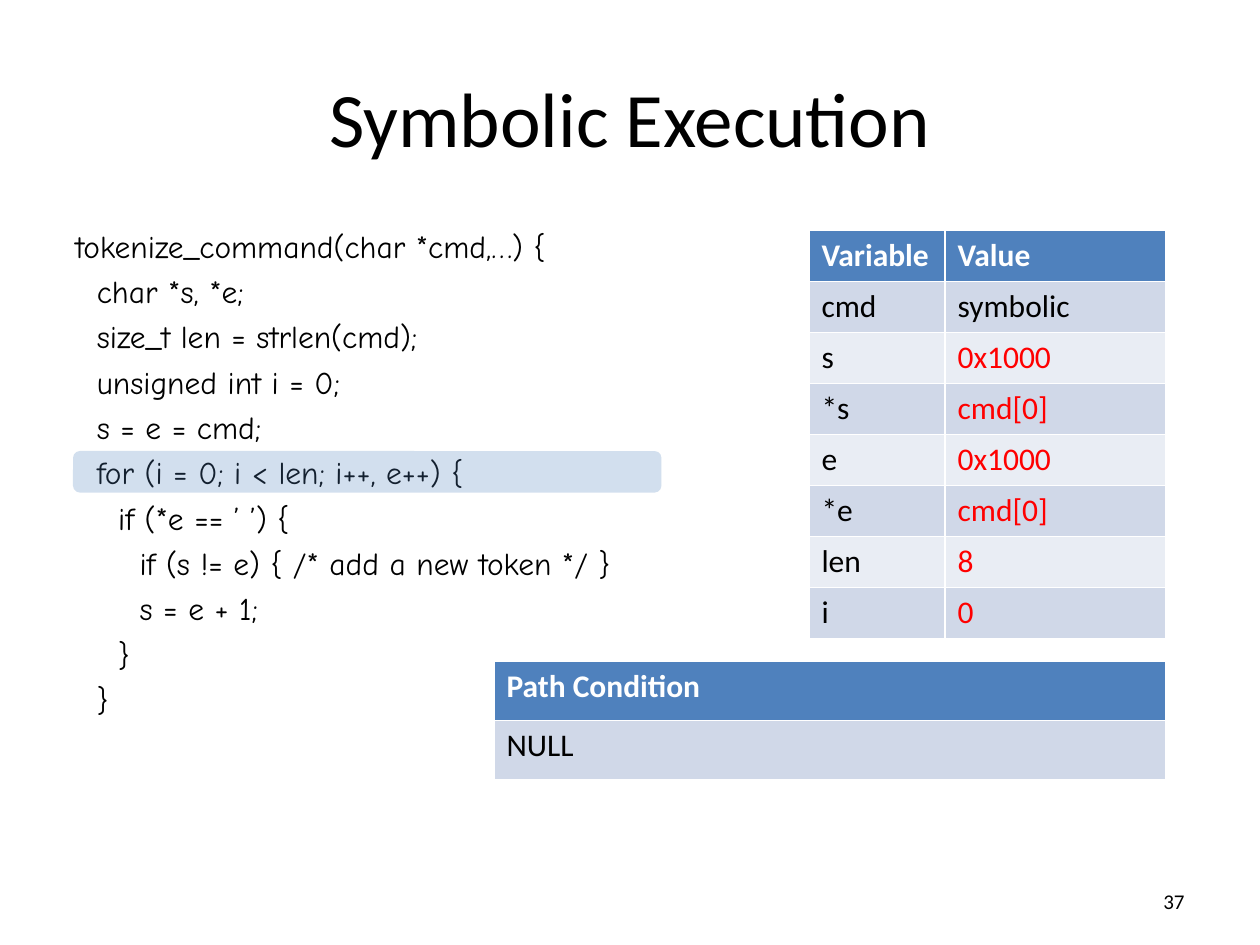
"""Build the symbolic execution slide."""
from lxml import etree
from pptx import Presentation
from pptx.dml.color import RGBColor
from pptx.enum import shapes, text
from pptx.oxml import ns
from pptx.util import Inches, Pt

BLACK, WHITE, RED, BLUE = "000000", "FFFFFF", "FF0000", "4F81BD"
BANDS = ["E9EDF4", "D0D8E8"]
CODE = [
    (0, "tokenize_command(char *cmd,…) {"),
    (1, "char *s, *e;"),
    (1, "size_t len = strlen(cmd);"),
    (1, "unsigned int i = 0;"),
    (1, "s = e = cmd;"),
    (1, "for (i = 0; i < len; i++, e++) {"),
    (2, "if (*e == ’ ’) {"),
    (3, "if (s != e) { /* add a new token */ }"),
    (3, "s = e + 1;"),
    (2, "}"),
    (1, "}"),
]
STATE = [
    ("Variable", "Value"),
    ("cmd", "symbolic"),
    ("s", "0x1000"),
    ("*s", "cmd[0]"),
    ("e", "0x1000"),
    ("*e", "cmd[0]"),
    ("len", "8"),
    ("i", "0"),
]
PATH = [("Path Condition",), ("NULL",)]


def box(*sides):
    """Convert inches to lengths."""
    return [Inches(side) for side in sides]


def paint(color, code):
    """Set a colour from a hex string."""
    color.rgb = RGBColor.from_string(code)


def style(para, size, code=BLACK, name="Calibri", bold=False):
    """Set the font of a paragraph."""
    font = para.font
    font.size, font.name, font.bold = Pt(size), name, bold
    paint(font.color, code)


def add_title(slide, words):
    """Fill and place the title."""
    title = slide.shapes.title
    title.left, title.top, title.width, title.height = box(0.5, 0.3, 9, 1.25)
    frame = title.text_frame
    frame.text = words
    frame.vertical_anchor = text.MSO_ANCHOR.MIDDLE
    para = frame.paragraphs[0]
    para.alignment = text.PP_ALIGN.CENTER
    style(para, 44)


def add_code(slide, lines):
    """Add the code with one indent step per level."""
    frame = slide.shapes.add_textbox(*box(0.5, 1.75, 4.83, 4)).text_frame
    frame.word_wrap = True
    for i, (level, words) in enumerate(lines):
        para = frame.add_paragraph() if i else frame.paragraphs[0]
        para.text = words
        para.space_before = Pt(4.3)
        para._p.get_or_add_pPr().set("marL", str(Inches(0.17 * level)))
        style(para, 18, name="Comic Neue")


def add_grid(slide, place, widths, rows, reds=()):
    """Add a banded table with a header row."""
    grid = slide.shapes.add_table(len(rows), len(widths), *box(*place)).table
    for col, width in zip(grid.columns, widths):
        col.width = Inches(width)
    for r, row in enumerate(rows):
        for c, words in enumerate(row):
            cell = grid.cell(r, c)
            cell.text = words
            cell.fill.solid()
            paint(cell.fill.fore_color, BANDS[r % 2] if r else BLUE)
            code = RED if (r, c) in reds else BLACK if r else WHITE
            style(cell.text_frame.paragraphs[0], 18, code, bold=r == 0)


def add_mark(slide, place):
    """Add a clear rounded bar over the current line."""
    bar = slide.shapes.add_shape(
        shapes.MSO_SHAPE.ROUNDED_RECTANGLE, *box(*place))
    bar.shadow.inherit = False
    bar.line.fill.background()
    bar.fill.solid()
    paint(bar.fill.fore_color, BLUE)
    tint = bar.fill._xPr.find(".//" + ns.qn("a:srgbClr"))
    etree.SubElement(tint, ns.qn("a:alpha"), val="25000")


def add_number(slide, words):
    """Add the slide number."""
    frame = slide.shapes.add_textbox(*box(7.17, 6.95, 2.33, 0.4)).text_frame
    frame.word_wrap = True
    frame.vertical_anchor = text.MSO_ANCHOR.MIDDLE
    frame.text = words
    para = frame.paragraphs[0]
    para.alignment = text.PP_ALIGN.RIGHT
    style(para, 12)


def main():
    """Build and save the slide."""
    deck = Presentation()
    deck.slide_width, deck.slide_height = box(10, 7.5)
    slide = deck.slides.add_slide(deck.slide_layouts[5])
    add_title(slide, "Symbolic Execution")
    add_code(slide, CODE)
    reds = [(r, 1) for r in range(2, len(STATE))]
    add_grid(slide, (6.42, 1.83, 2.83, 3.24), (1.08, 1.75), STATE, reds)
    add_grid(slide, (3.92, 5.25, 5.33, 0.94), (5.33,), PATH)
    add_mark(slide, (0.58, 3.58, 4.67, 0.33))
    add_number(slide, "37")
    deck.save("out.pptx")


if __name__ == "__main__":
    main()
